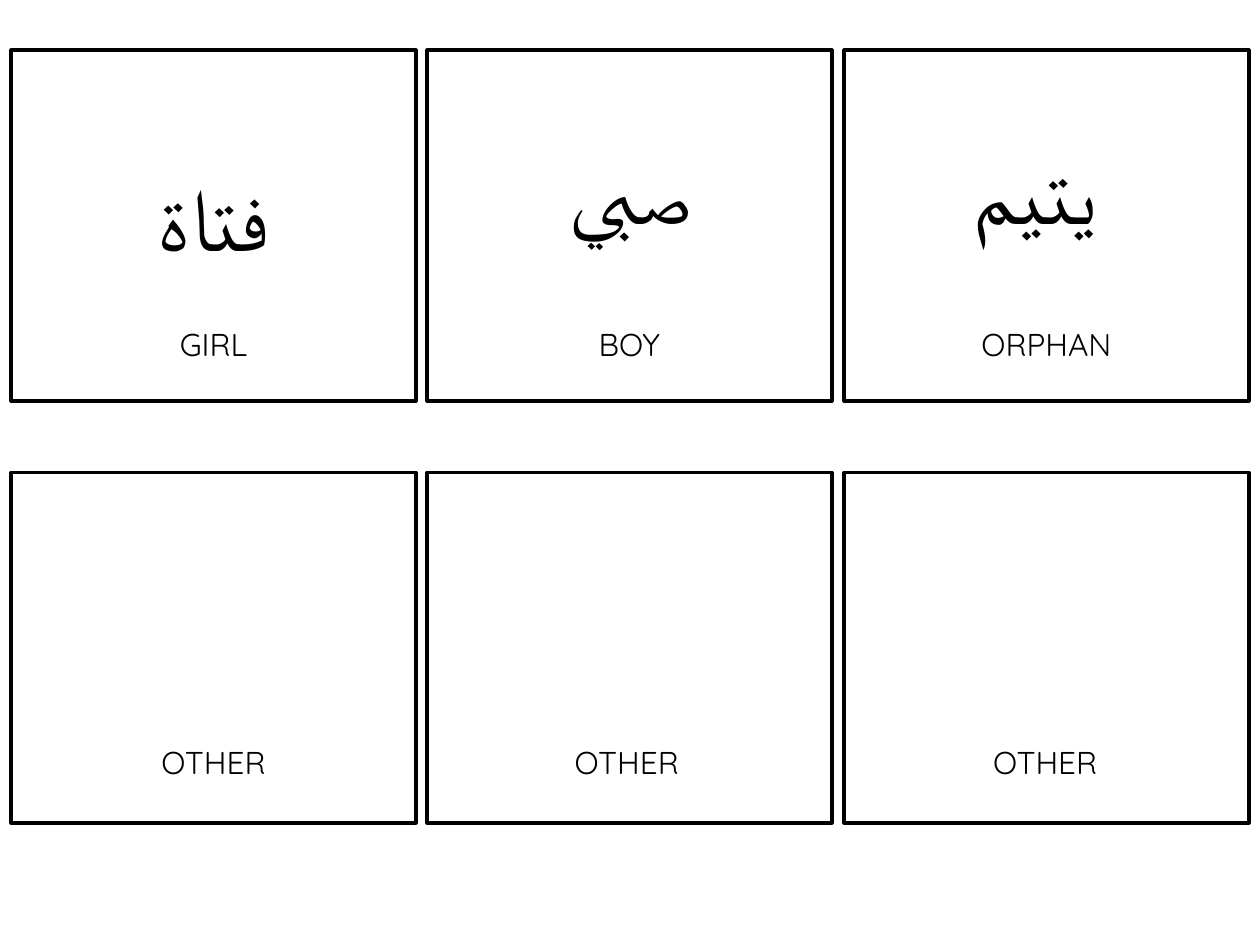
from lxml import etree
from pptx import Presentation
from pptx import util as u
from pptx.dml.color import RGBColor
from pptx.enum import shapes, text
from pptx.oxml.ns import qn

COLOURS = {"ink": "000000", "paper": "FFFFFF"}
FONT = "Quicksand"
CARD_WIDTH, CARD_HEIGHT = 3.21, 2.78
COLUMNS = [0.09, 3.39, 6.7]
ROWS = [0.4, 3.75]

presentation = Presentation()
presentation.slide_width = u.Inches(10)
presentation.slide_height = u.Inches(7.5)
slide = presentation.slides.add_slide(presentation.slide_layouts[6])


def add_rectangle(left, top, width, height, colour, weight):
    """Add an unfilled rectangle with a round-cornered outline."""
    shape = slide.shapes.add_shape(
        shapes.MSO_SHAPE.RECTANGLE,
        u.Inches(left), u.Inches(top), u.Inches(width), u.Inches(height))
    shape.shadow.inherit = False
    shape.fill.background()
    shape.line.color.rgb = RGBColor.from_string(COLOURS[colour])
    shape.line.width = u.Pt(weight)
    etree.SubElement(shape.line._get_or_add_ln(), qn("a:round"))
    return shape


def add_label(wording, left, top, width, height, size, outline=None):
    """Add centred text; outline is the weight of a paper-coloured border."""
    if outline:
        shape = add_rectangle(left, top, width, height, "paper", outline)
    else:
        shape = slide.shapes.add_textbox(
            u.Inches(left), u.Inches(top), u.Inches(width), u.Inches(height))
    frame = shape.text_frame
    frame.word_wrap = True
    frame.auto_size = text.MSO_AUTO_SIZE.SHAPE_TO_FIT_TEXT
    frame.vertical_anchor = text.MSO_ANCHOR.TOP
    paragraph = frame.paragraphs[0]
    paragraph.text = wording
    paragraph.alignment = text.PP_ALIGN.CENTER
    paragraph.font.name = FONT
    paragraph.font.size = u.Pt(size)
    paragraph.font.color.rgb = RGBColor.from_string(COLOURS["ink"])


# The orphan word lies under its card frame, so its border stays hidden
add_label("يتيم ", 6.7, 1.04, 3.19, 0.94, 50, outline=3)

for top in ROWS:
    for left in COLUMNS:
        add_rectangle(left, top, CARD_WIDTH, CARD_HEIGHT, "ink", 2.25)

add_label("فتاة", 0.11, 1.25, 3.18, 0.94, 50)
add_label("صبي", 3.44, 1.04, 3.13, 0.94, 50, outline=0.75)

captions = [
    (2.53, COLUMNS, ["GIRL", "BOY", "ORPHAN"]),
    (5.85, [0.09, 3.37, 6.69], ["OTHER"] * 3),
]
for top, lefts, wordings in captions:
    for left, wording in zip(lefts, wordings):
        add_label(wording, left, top, CARD_WIDTH, 0.4, 18)

presentation.save("out.pptx")
